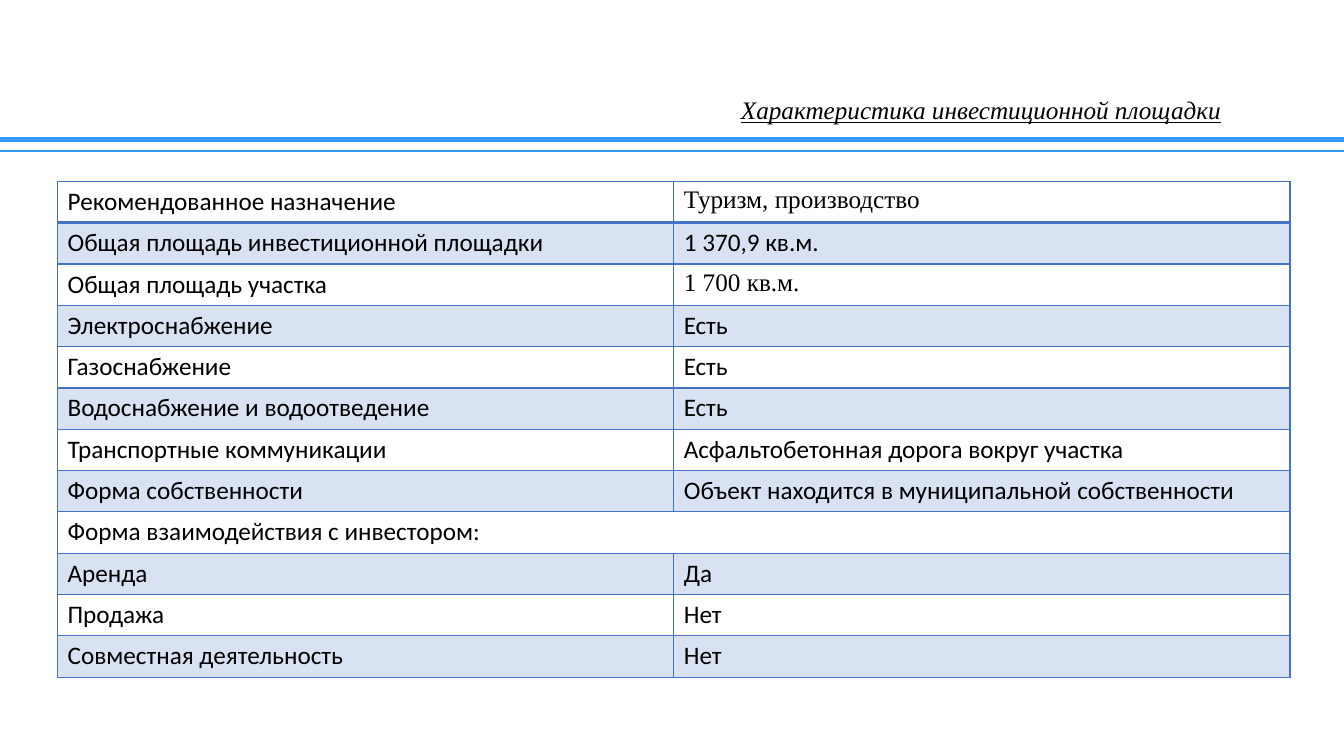
from lxml import etree
from pptx import Presentation
from pptx import util as u
from pptx.dml.color import RGBColor
from pptx.enum import shapes, text
from pptx.oxml.ns import qn

COLORS = {"text": "000000", "rule": "3399FF", "accent": "4472C4"}
SANS, SERIF = "Calibri", "Times New Roman"
SLIDE_WIDTH, SLIDE_HEIGHT = u.Cm(33.87), u.Cm(19.05)

TITLE = "Характеристика инвестиционной площадки"
ROWS = [
    ("Рекомендованное назначение", "Туризм, производство"),
    ("Общая площадь инвестиционной площадки", "1 370,9 кв.м."),
    ("Общая площадь участка", "1 700 кв.м."),
    ("Электроснабжение", "Есть"),
    ("Газоснабжение", "Есть"),
    ("Водоснабжение и водоотведение", "Есть"),
    ("Транспортные коммуникации", "Асфальтобетонная дорога вокруг участка"),
    ("Форма собственности", "Объект находится в муниципальной собственности"),
    ("Форма взаимодействия с инвестором:",),
    ("Аренда", "Да"),
    ("Продажа", "Нет"),
    ("Совместная деятельность", "Нет"),
]
SERIF_VALUES = {"Туризм, производство", "1 700 кв.м."}


def write_text(frame, content, font=SANS, size=18, color="text", italic=False,
               underline=False, align=text.PP_ALIGN.LEFT, line_spacing=1.0):
    paragraph = frame.paragraphs[0]
    paragraph.alignment = align
    paragraph.line_spacing = line_spacing
    run = paragraph.add_run()
    run.text = content
    run.font.name = font
    run.font.size = u.Pt(size)
    run.font.italic = italic
    run.font.underline = underline
    run.font.color.rgb = RGBColor.from_string(COLORS[color])


def add_title(slide):
    box = slide.shapes.add_textbox(u.Cm(16.94), u.Cm(2.46), u.Cm(15.57), u.Cm(0.69))
    frame = box.text_frame
    frame.word_wrap = True
    frame.vertical_anchor = text.MSO_ANCHOR.MIDDLE
    write_text(frame, TITLE, font=SERIF, italic=True, underline=True,
               align=text.PP_ALIGN.CENTER, line_spacing=0.9)


def add_rule(slide, top, width):
    """Draw a horizontal line across the whole slide."""
    rule = slide.shapes.add_connector(
        shapes.MSO_CONNECTOR.STRAIGHT, 0, top, SLIDE_WIDTH, top)
    rule.line.color.rgb = RGBColor.from_string(COLORS["rule"])
    rule.line.width = u.Pt(width)
    etree.SubElement(rule._element.spPr, qn("a:effectLst"))


def set_borders(cell, bottom=1):
    properties = cell._tc.get_or_add_tcPr()
    for side, width in (("L", 1), ("R", 1), ("T", 1), ("B", bottom)):
        line = etree.SubElement(properties, qn(f"a:ln{side}"), w=str(u.Pt(width)))
        fill = etree.SubElement(line, qn("a:solidFill"))
        etree.SubElement(fill, qn("a:srgbClr"), val=COLORS["accent"])


def set_fill(cell, shaded):
    if not shaded:
        cell.fill.background()
        return
    cell.fill.solid()
    cell.fill.fore_color.rgb = RGBColor.from_string(COLORS["accent"])
    color = cell._tc.tcPr.find(qn("a:solidFill")).find(qn("a:srgbClr"))
    etree.SubElement(color, qn("a:alpha"), val="20000")


def add_site_table(slide):
    frame = slide.shapes.add_table(
        len(ROWS), 2, u.Cm(1.45), u.Cm(4.57), u.Cm(31.06), u.Cm(12.5))
    table = frame.table
    table.first_row = table.horz_banding = False
    for row, values in enumerate(ROWS):
        for column in range(2):
            cell = table.cell(row, column)
            set_borders(cell, bottom=2 if row == 0 else 1)
            set_fill(cell, shaded=row % 2 == 1)
        if len(values) == 1:
            table.cell(row, 0).merge(table.cell(row, 1))
        for column, value in enumerate(values):
            write_text(table.cell(row, column).text_frame, value,
                       font=SERIF if value in SERIF_VALUES else SANS)


def main():
    presentation = Presentation()
    presentation.slide_width = SLIDE_WIDTH
    presentation.slide_height = SLIDE_HEIGHT
    slide = presentation.slides.add_slide(presentation.slide_layouts[6])
    add_rule(slide, u.Cm(3.51), 3.5)
    add_rule(slide, u.Cm(3.81), 1.5)
    add_title(slide)
    add_site_table(slide)
    presentation.save("out.pptx")


if __name__ == "__main__":
    main()
